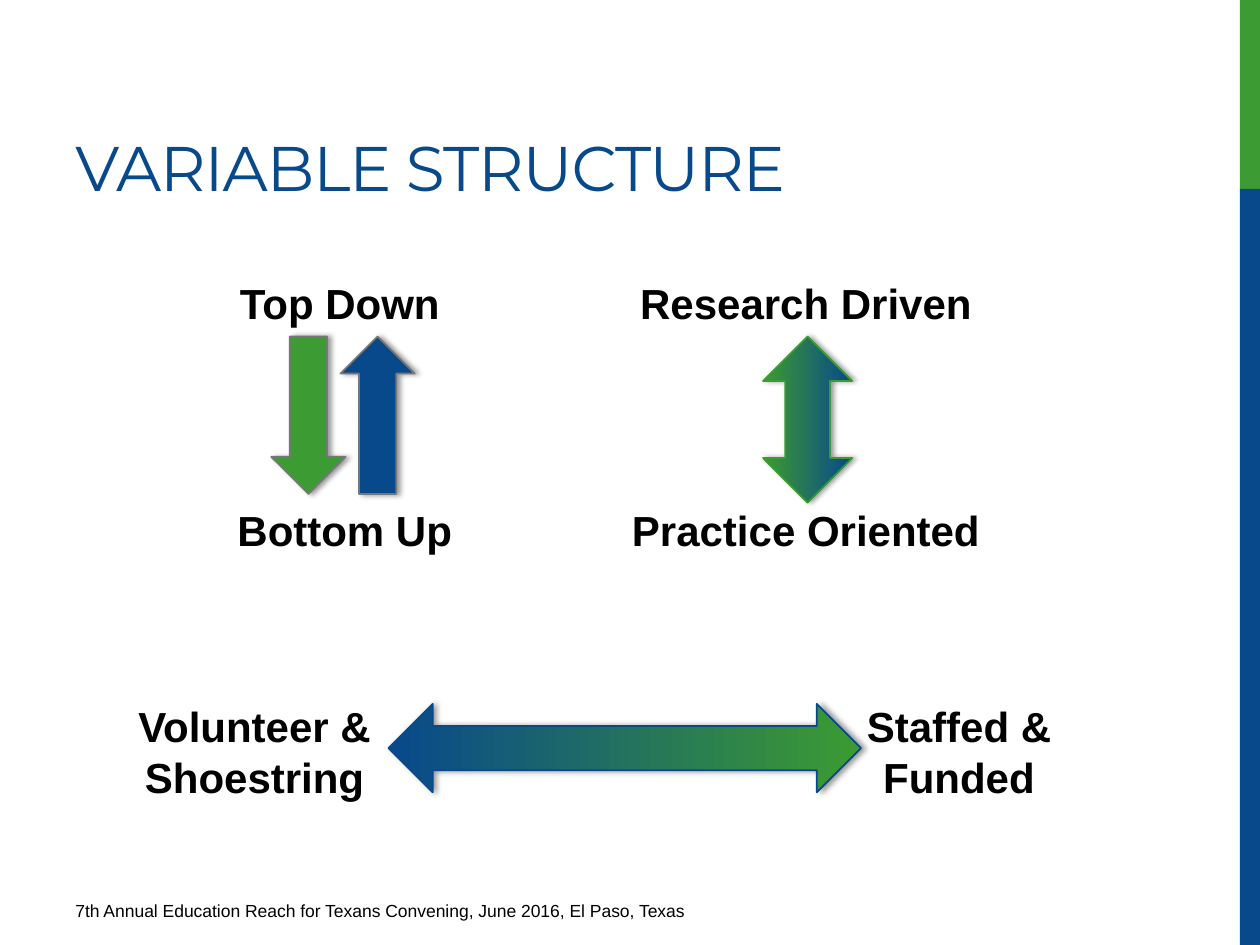
from lxml import etree
from pptx import Presentation
from pptx.dml.color import RGBColor
from pptx.enum.shapes import MSO_SHAPE
from pptx.enum.text import MSO_ANCHOR, PP_ALIGN
from pptx.oxml.ns import qn
from pptx.util import Pt

RECT = MSO_SHAPE.RECTANGLE
UP = MSO_SHAPE.UP_ARROW
UP_DOWN = MSO_SHAPE.UP_DOWN_ARROW
LEFT_RIGHT = MSO_SHAPE.LEFT_RIGHT_ARROW
BOTTOM = MSO_ANCHOR.BOTTOM
LEFT = PP_ALIGN.LEFT
CENTER = PP_ALIGN.CENTER

GREEN = RGBColor(0x3C, 0x9B, 0x32)
BLUE = RGBColor(0x08, 0x49, 0x8B)
GRAY = RGBColor(0x77, 0x77, 0x77)
BLACK = RGBColor(0, 0, 0)


class Deck:
    body = "Arial"
    head = "Montserrat"

    def __init__(self):
        self.file = Presentation()
        self.file.slide_width = Pt(720)
        self.file.slide_height = Pt(540)
        self.slide = self.file.slides.add_slide(self.file.slide_layouts[6])

    def shape(self, kind, box):
        shape = self.slide.shapes.add_shape(kind, *map(Pt, box))
        shape.shadow.inherit = False
        return shape

    def bar(self, box, color):
        bar = self.shape(RECT, box)
        bar.fill.solid()
        bar.fill.fore_color.rgb = color
        bar.line.fill.background()

    def text(self, box, lines, size, color=BLACK, font=body, bold=False, align=LEFT, wrap=True):
        label = self.slide.shapes.add_textbox(*map(Pt, box))
        frame = label.text_frame
        frame.word_wrap = wrap
        frame.text = "\n".join(lines)
        for par in frame.paragraphs:
            par.alignment = align
            par.font.name = font
            par.font.size = Pt(size)
            par.font.bold = bold
            par.font.color.rgb = color
        return frame

    def title(self, box, words):
        frame = self.text(box, [words], 36, BLUE, self.head)
        frame.vertical_anchor = BOTTOM
        frame.paragraphs[0].runs[0]._r.get_or_add_rPr().set("spc", "-60")

    def label(self, box, *lines):
        self.text(box, lines, 24, bold=True, align=CENTER, wrap=False)

    def arrow(self, kind, box, colors, edge, turn=0):
        arrow = self.shape(kind, box)
        arrow.rotation = turn
        if len(colors) == 1:
            arrow.fill.solid()
            arrow.fill.fore_color.rgb = colors[0]
        else:
            arrow.fill.gradient()
            arrow.fill.gradient_angle = 0
            for stop, color in zip(arrow.fill.gradient_stops, colors):
                stop.color.rgb = color
        arrow.line.color.rgb = edge
        arrow.line.width = Pt(1)
        self.shade(arrow)

    def shade(self, shape):
        effects = shape._element.spPr.find(qn("a:effectLst"))
        shadow = etree.SubElement(
            effects, qn("a:outerShdw"), blurRad=str(Pt(3.1)),
            dist=str(Pt(1.8)), dir="0", rotWithShape="0")
        color = etree.SubElement(shadow, qn("a:srgbClr"), val=str(BLACK))
        etree.SubElement(color, qn("a:alpha"), val="40000")


def main():
    deck = Deck()
    deck.bar((708.5, 0, 11.5, 108), GREEN)
    deck.bar((708.5, 108, 11.5, 432), BLUE)
    deck.title((36, 12, 469.5, 108), "VARIABLE STRUCTURE")
    deck.text((36, 511, 456, 22),
              ["7th Annual Education Reach for Texans Convening, June 2016, El Paso, Texas"], 10)

    top, low, side = 155, 285, 397
    deck.label((129.5, top, 129.5, 36), "Top Down")
    deck.label((128, low, 138, 36), "Bottom Up")
    deck.label((357.5, top, 206, 36), "Research Driven")
    deck.label((353, low, 215, 36), "Practice Oriented")
    deck.label((71, side, 149, 65.5), "Volunteer &", "Shoestring")
    deck.label((487.5, side, 121, 65.5), "Staffed &", "Funded")

    deck.arrow(UP, (194.5, 192.25, 42.5, 90), [BLUE], GRAY)
    deck.arrow(UP, (155, 192.25, 42.5, 90), [GREEN], GRAY, 180)
    deck.arrow(UP_DOWN, (436, 192.25, 51, 95), [GREEN, BLUE], GREEN)
    deck.arrow(LEFT_RIGHT, (222, 402.25, 270, 50.5), [BLUE, GREEN], BLUE)
    deck.file.save("out.pptx")


if __name__ == "__main__":
    main()
